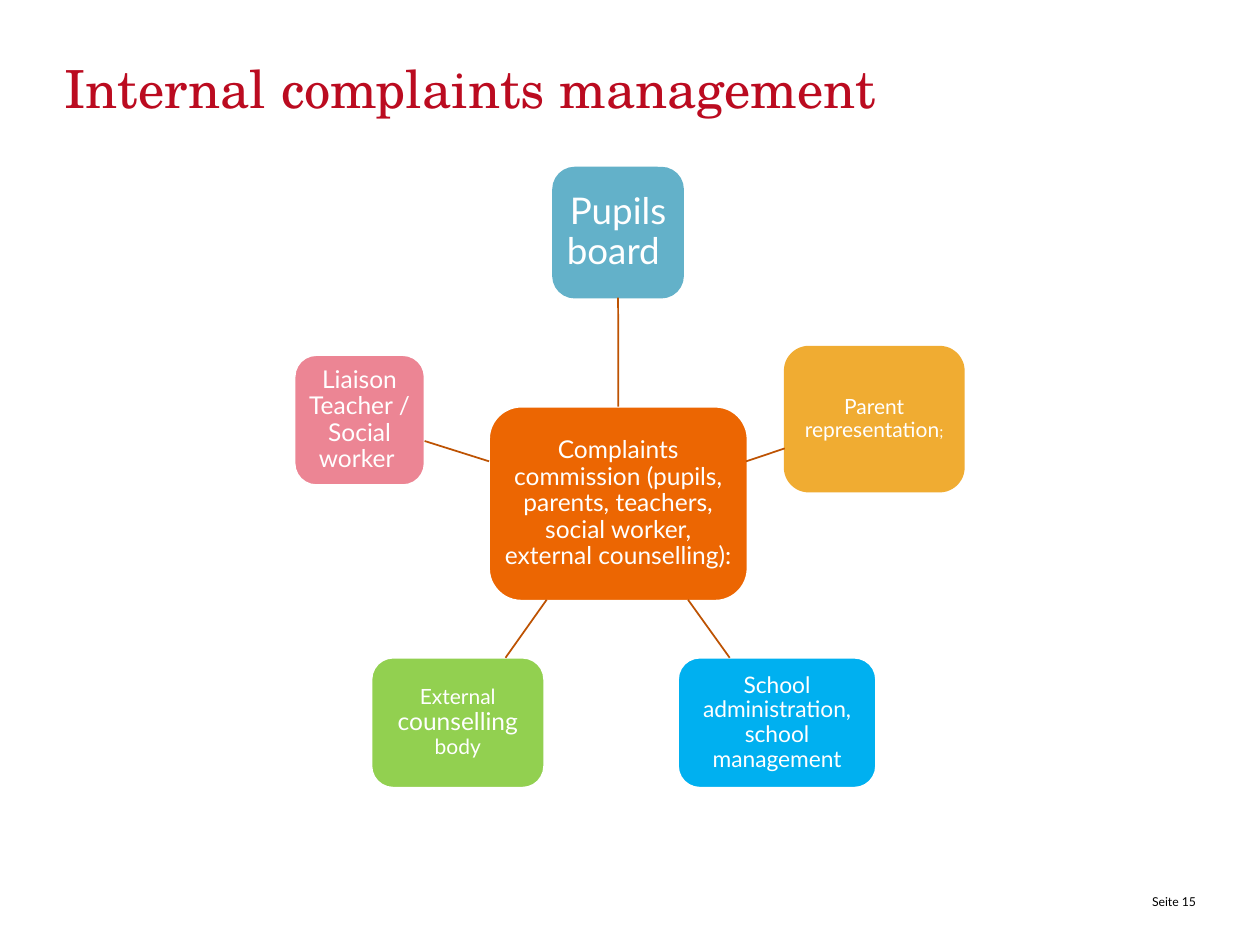
from lxml import etree
from pptx import Presentation
from pptx.dml.color import RGBColor
from pptx.enum.shapes import MSO_CONNECTOR, MSO_SHAPE
from pptx.enum.text import MSO_ANCHOR, MSO_AUTO_SIZE, PP_ALIGN
from pptx.oxml.ns import qn
from pptx.util import Cm, Pt

STRAIGHT = MSO_CONNECTOR.STRAIGHT
ROUNDED = MSO_SHAPE.ROUNDED_RECTANGLE
TOP, MIDDLE = MSO_ANCHOR.TOP, MSO_ANCHOR.MIDDLE
LEFT, CENTER, RIGHT = PP_ALIGN.LEFT, PP_ALIGN.CENTER, PP_ALIGN.RIGHT
NO_FIT = MSO_AUTO_SIZE.NONE
TITLE_ONLY = 5
BODY_FONT, TITLE_FONT = "Lato", "TeX Gyre Schola"
WHITE, SPOKE_COLOR = "FFFFFF", "BD5202"

# Place in cm, fill, outline, text inset in cm, runs of (text, size)
NODES = {
    "commission": ((9.86, 8.2, 5.21, 3.91), "EC6602", WHITE, 0.1, [
        ("Complaints commission (pupils, parents, teachers, "
         "social worker, external counselling):", 14)]),
    "pupils": ((11.15, 3.38, 2.62, 2.62), "63B1C9", "63B1C9", 0.15,
               [("Pupils board ", 21)]),
    "parents": ((15.82, 6.99, 3.61, 2.92), "F0AC32", "F0AC32", 0.08,
                [("Parent representation", 12), (";", 9)]),
    "school": ((13.67, 13.26, 3.99, 2.62), "00B0F0", WHITE, 0.1,
               [("School administration, school management", 13)]),
    "counselling": ((7.49, 13.26, 3.48, 2.62), "92D050", WHITE, 0.08,
                    [("External ", 12), ("counselling", 14), (" body", 12)]),
    "liaison": ((5.94, 7.16, 2.62, 2.62), "EC8594", WHITE, 0.1,
                [("Liaison Teacher / Social worker ", 14)]),
}

# Start and end points in cm of the slanted spokes
SPOKES = [
    (15.04, 9.3, 15.82, 9.04),
    (13.87, 12.09, 14.71, 13.26),
    (11.02, 12.09, 10.19, 13.26),
    (9.86, 9.3, 8.56, 8.89),
]


def color(value):
    return RGBColor.from_string(value)


def set_frame(frame, anchor, inset=0):
    frame.word_wrap = True
    frame.auto_size = NO_FIT
    frame.vertical_anchor = anchor
    frame.margin_left = frame.margin_right = Cm(inset)
    frame.margin_top = frame.margin_bottom = Cm(inset)


def write(para, runs, font, tint, align):
    para.alignment = align
    para.font.name = font
    para.font.color.rgb = color(tint)
    sizes = {size for _, size in runs}
    if len(sizes) == 1:
        para.font.size = Pt(sizes.pop())
    for text, size in runs:
        span = para.add_run()
        span.text = text
        if para.font.size is None:
            span.font.size = Pt(size)


def add_title(page, text):
    title = page.shapes.title
    title.left, title.top = Cm(1.3), Cm(1.12)
    title.width, title.height = Cm(22.81), Cm(1.6)
    set_frame(title.text_frame, TOP)
    write(title.text_frame.paragraphs[0], [(text, 30)], TITLE_FONT,
          "BB0B20", LEFT)


def add_node(page, place, fill, outline, inset, runs):
    box = page.shapes.add_shape(ROUNDED, *map(Cm, place))
    box.shadow.inherit = False
    box.fill.solid()
    box.fill.fore_color.rgb = color(fill)
    box.line.color.rgb = color(outline)
    box.line.width = Pt(1)
    set_frame(box.text_frame, MIDDLE, inset)
    para = box.text_frame.paragraphs[0]
    para.line_spacing = 0.9
    write(para, runs, BODY_FONT, WHITE, CENTER)
    return box


def add_spoke(page, points):
    spoke = page.shapes.add_connector(STRAIGHT, *map(Cm, points))
    spoke.line.color.rgb = color(SPOKE_COLOR)
    spoke.line.width = Pt(1)
    etree.SubElement(spoke._element.spPr, qn("a:effectLst"))
    return spoke


def add_page_number(page, text):
    box = page.shapes.add_textbox(Cm(21.54), Cm(17.93), Cm(2.57), Cm(0.41))
    set_frame(box.text_frame, TOP)
    box.text_frame.margin_top = Cm(0.1)
    write(box.text_frame.paragraphs[0], [(text, 7)], BODY_FONT,
          "000000", RIGHT)


def main():
    deck = Presentation()
    deck.slide_width, deck.slide_height = Cm(25.4), Cm(19.05)
    page = deck.slides.add_slide(deck.slide_layouts[TITLE_ONLY])
    add_title(page, "Internal complaints management")

    # Commission in the middle, its partners around it
    boxes = {name: add_node(page, *node) for name, node in NODES.items()}

    # Spokes: the upright one joins two side middles
    upright = add_spoke(page, (12.46, 8.2, 12.46, 6))
    upright.begin_connect(boxes["commission"], 0)
    upright.end_connect(boxes["pupils"], 2)
    for points in SPOKES:
        add_spoke(page, points)

    add_page_number(page, "Seite 15")
    deck.save("out.pptx")


if __name__ == "__main__":
    main()
